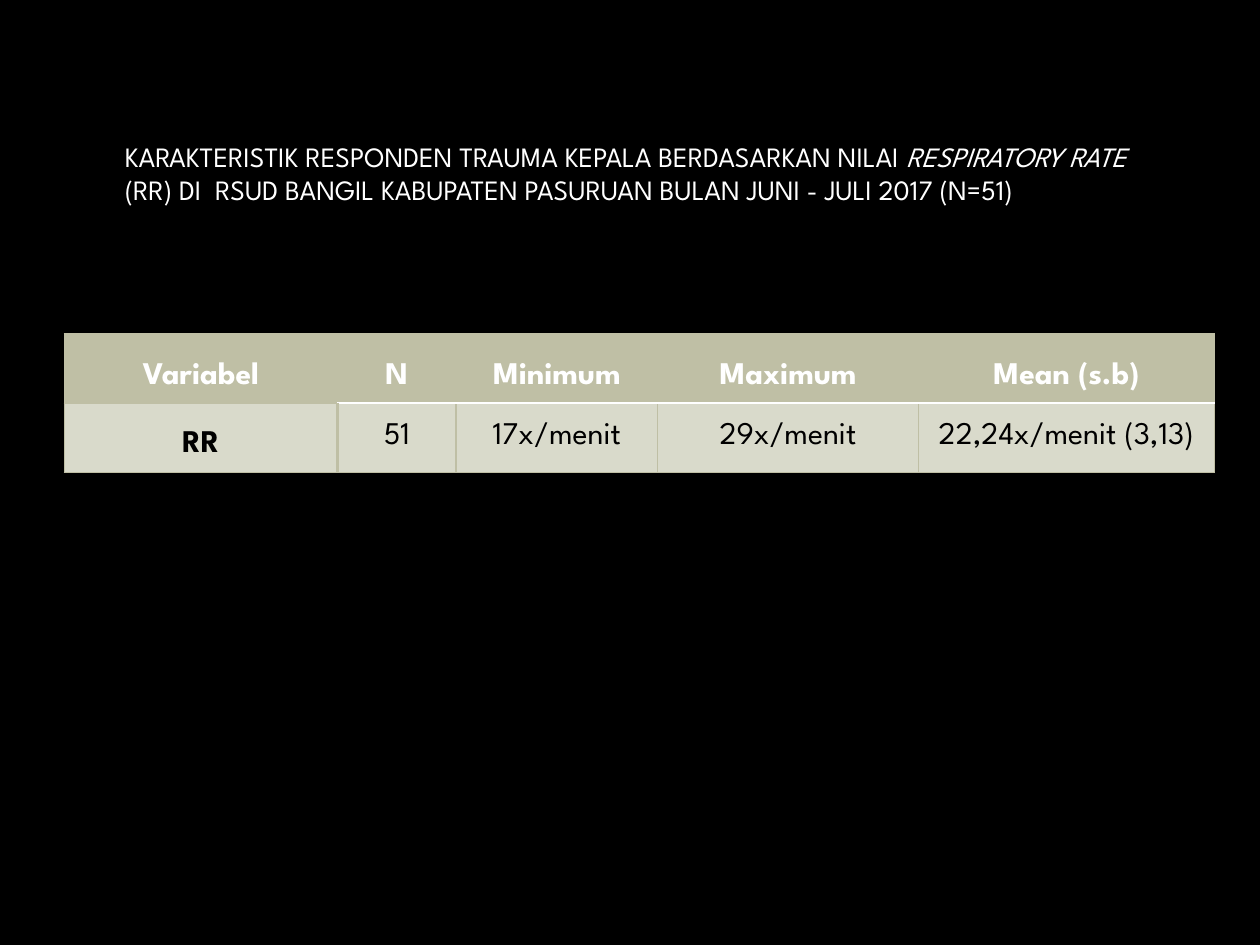
import dataclasses

import lxml.etree
import pptx
import pptx.dml.color
import pptx.enum.text
import pptx.oxml.ns
import pptx.util

RGBColor = pptx.dml.color.RGBColor
BLACK = RGBColor(0x00, 0x00, 0x00)
WHITE = RGBColor(0xFF, 0xFF, 0xFF)
OLIVE = RGBColor(0xBF, 0xBF, 0xA5)
PALE_OLIVE = RGBColor(0xD9, 0xDA, 0xCB)
FONT = "League Spartan"
SLIDE_W = pptx.util.Inches(10)
SLIDE_H = pptx.util.Inches(7.5)
ROW_H = 0.55
ROW_LEADING = pptx.util.Pt(16)


@dataclasses.dataclass
class Column:
    """One table column with its width in inches."""

    heading: str
    value: str
    width: float


COLUMNS = [
    Column("Variabel", "RR", 2.17),
    Column("N", "51", 0.94),
    Column("Minimum", "17x/menit", 1.6),
    Column("Maximum", "29x/menit", 2.07),
    Column("Mean (s.b)", "22,24x/menit (3,13)", 2.35),
]
TITLE_RUNS = [
    ("KARAKTERISTIK RESPONDEN TRAUMA KEPALA BERDASARKAN NILAI ", False),
    ("RESPIRATORY RATE ", True),
    ("(RR) DI  RSUD BANGIL KABUPATEN PASURUAN BULAN JUNI - JULI 2017 (N=51)", False),
]


def style_run(r, size: float, color: RGBColor, bold: bool = False, italic: bool = False) -> None:
    """Apply the slide's typeface to a run."""
    r.font.name = FONT
    r.font.size = pptx.util.Pt(size)
    r.font.color.rgb = color
    r.font.bold = bold
    r.font.italic = italic


def add_border(cell, side: str, color: RGBColor = OLIVE, width: float = 0.75) -> None:
    """Draw one edge (L, R, T or B) of a cell."""
    qn = pptx.oxml.ns.qn
    ln = lxml.etree.SubElement(cell._tc.get_or_add_tcPr(), qn(f"a:ln{side}"))
    ln.set("w", str(pptx.util.Pt(width)))
    fill = lxml.etree.SubElement(ln, qn("a:solidFill"))
    lxml.etree.SubElement(fill, qn("a:srgbClr")).set("val", str(color))


def fill_cell(cell, text: str, is_header: bool, is_first: bool, is_second: bool) -> None:
    """Write and format one table cell."""
    cell.margin_left = cell.margin_right = pptx.util.Inches(0.07)
    cell.margin_top = cell.margin_bottom = 0
    rule = (WHITE, 1.5) if not is_first else (OLIVE, 0.75)
    add_border(cell, "L", width=1.5 if is_second and not is_header else 0.75)
    add_border(cell, "R", width=1.5 if is_first and not is_header else 0.75)
    add_border(cell, "T", *(rule if not is_header else (OLIVE, 0.75)))
    add_border(cell, "B", *(rule if is_header else (OLIVE, 0.75)))
    cell.fill.solid()
    cell.fill.fore_color.rgb = OLIVE if is_header else PALE_OLIVE
    anchor = pptx.enum.text.MSO_ANCHOR
    cell.vertical_anchor = anchor.TOP if is_header or is_first else anchor.MIDDLE
    if is_first and not is_header:
        cell.margin_top = ROW_LEADING
    p = cell.text_frame.paragraphs[0]
    p.text = text
    p.alignment = pptx.enum.text.PP_ALIGN.CENTER
    p.line_spacing = 2.0 if is_header else ROW_LEADING
    style_run(p.runs[0], 18, WHITE if is_header else BLACK, is_header or is_first)


def add_title(s) -> None:
    """Place and write the slide title."""
    sp = s.shapes.title
    sp.left, sp.top = int(SLIDE_W * 0.089), int(SLIDE_H * 0.087)
    sp.width, sp.height = int(SLIDE_W * 0.821), int(SLIDE_H * 0.192)
    tf = sp.text_frame
    tf.word_wrap = True
    tf.auto_size = pptx.enum.text.MSO_AUTO_SIZE.NONE
    tf.vertical_anchor = pptx.enum.text.MSO_ANCHOR.MIDDLE
    p = tf.paragraphs[0]
    p.alignment = pptx.enum.text.PP_ALIGN.LEFT
    for text, italic in TITLE_RUNS:
        r = p.add_run()
        r.text = text
        style_run(r, 16, WHITE, italic=italic)


def add_results(s) -> None:
    """Draw the respiratory rate table."""
    inches = pptx.util.Inches
    width = sum(column.width for column in COLUMNS)
    table = s.shapes.add_table(
        2, len(COLUMNS), inches(0.51), inches(2.65), inches(width), inches(2 * ROW_H)
    ).table
    table.horz_banding = False
    for i, column in enumerate(COLUMNS):
        table.columns[i].width = inches(column.width)
        for j, text in enumerate((column.heading, column.value)):
            fill_cell(table.cell(j, i), text, j == 0, i == 0, i == 1)


def main() -> None:
    """Build and save the slide."""
    prs = pptx.Presentation()
    prs.slide_width, prs.slide_height = SLIDE_W, SLIDE_H
    s = prs.slides.add_slide(prs.slide_layouts[5])
    s.background.fill.solid()
    s.background.fill.fore_color.rgb = BLACK
    add_title(s)
    add_results(s)
    prs.save("out.pptx")


if __name__ == "__main__":
    main()
